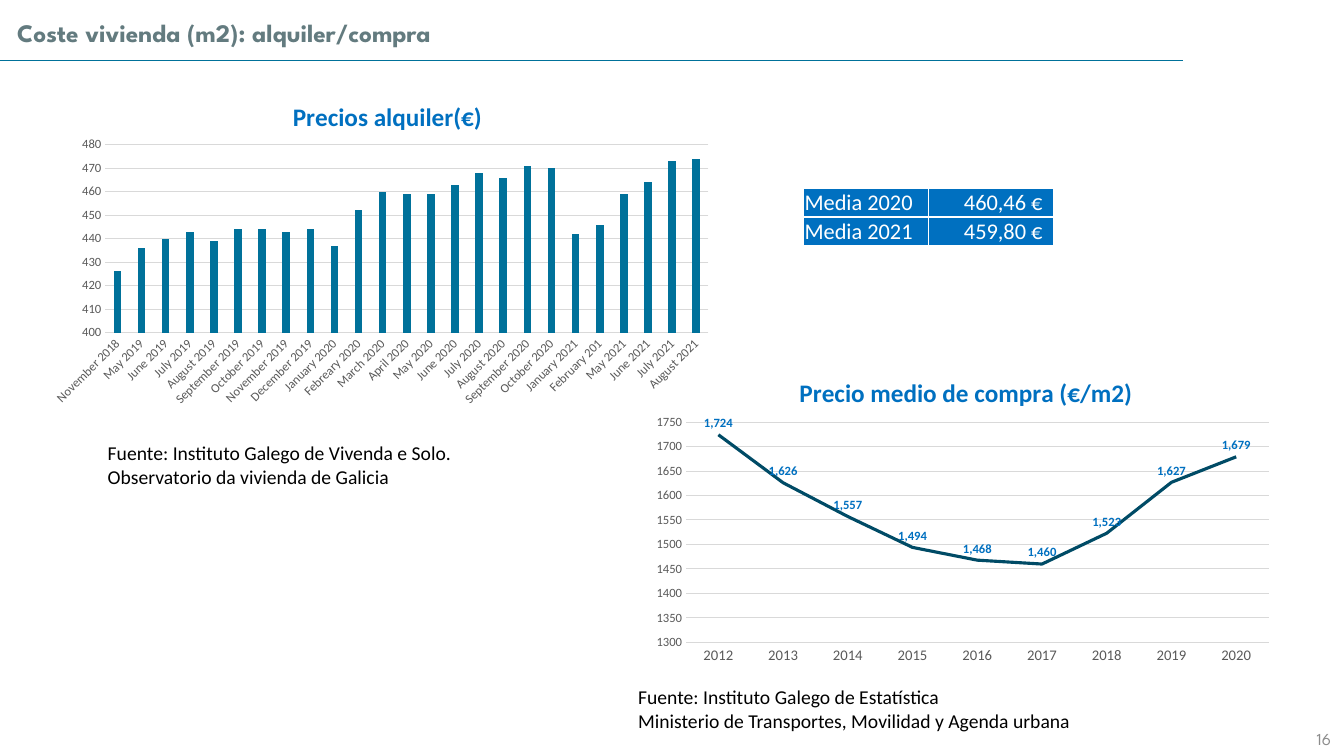
from dataclasses import dataclass

from pptx import Presentation
from pptx.chart.data import CategoryChartData
from pptx.dml.color import RGBColor
from pptx.enum.chart import XL_CHART_TYPE as ChartType, XL_LABEL_POSITION as LabelSpot
from pptx.enum.chart import XL_TICK_MARK as TickMark
from pptx.enum.shapes import MSO_CONNECTOR as Connector
from pptx.enum.text import MSO_ANCHOR as Anchor, PP_ALIGN as Align
from pptx.oxml import parse_xml
from pptx.oxml.ns import nsdecls, qn
from pptx.util import Inches, Pt


@dataclass(frozen=True)
class Theme:
    body: str = "Calibri"
    heading: str = "League Spartan"
    blue: RGBColor = RGBColor.from_string("0070C0")
    teal: RGBColor = RGBColor.from_string("00719A")
    navy: RGBColor = RGBColor.from_string("004B66")
    slate: RGBColor = RGBColor.from_string("637B7F")
    axis: RGBColor = RGBColor.from_string("595959")
    grid: RGBColor = RGBColor.from_string("D9D9D9")
    number: RGBColor = RGBColor.from_string("8C8C8C")
    black: RGBColor = RGBColor.from_string("000000")
    white: RGBColor = RGBColor.from_string("FFFFFF")
    title_size: float = 18
    cell_size: float = 16
    source_size: float = 14
    number_size: float = 12
    chart_size: float = 10
    year_size: float = 10.5
    tick_size: float = 9


theme = Theme()


def write(frame, text, size, color, font=theme.body, bold=False, align=Align.LEFT):
    """Fill a text frame, one paragraph for each line of text."""
    frame.word_wrap = True
    for index, line in enumerate(text.split("\n")):
        para = frame.paragraphs[0] if index == 0 else frame.add_paragraph()
        para.alignment = align
        span = para.add_run()
        span.text = line
        span.font.name, span.font.size = font, Pt(size)
        span.font.bold, span.font.color.rgb = bold, color


def add_price_chart(kind, area, title, prices, scale, category_size, title_spot, plot_area):
    """Add a one-series chart with a blue title and grey axes."""
    data = CategoryChartData()
    data.categories = list(prices)
    data.add_series("Series 1", list(prices.values()))
    chart = page.shapes.add_chart(kind, *map(Inches, area), data).chart
    chart.has_legend = False
    chart.font.name, chart.font.size = theme.body, Pt(theme.chart_size)
    chart.font.color.rgb = theme.black
    write(chart.chart_title.text_frame, title, theme.title_size, theme.blue, bold=True,
          align=Align.CENTER)
    chart.chart_title.include_in_layout = False

    # Axes
    low, high, step = scale
    values, categories = chart.value_axis, chart.category_axis
    values.minimum_scale, values.maximum_scale, values.major_unit = low, high, step
    values.tick_labels.number_format = "General"
    values.tick_labels.number_format_is_linked = False
    values.format.line.fill.background()
    for line in (values.major_gridlines.format.line, categories.format.line):
        line.color.rgb, line.width = theme.grid, Pt(0.75)
    for axis, size in ((values, theme.tick_size), (categories, category_size)):
        axis.major_tick_mark = axis.minor_tick_mark = TickMark.NONE
        font = axis.tick_labels.font
        font.name, font.size, font.color.rgb = theme.body, Pt(size), theme.axis

    # Fixed places for the title and the plot, as fractions of the chart
    title_xml = chart.chart_title._element
    plot_xml = chart._chartSpace.chart.plotArea
    for owner, place, target in ((title_xml, title_spot, ""),
                                 (plot_xml, plot_area, '<c:layoutTarget val="inner"/>')):
        for old in owner.findall(qn("c:layout")):
            owner.remove(old)
        modes = "".join(f'<c:{side}Mode val="edge"/>' for side in "xy")
        sizes = "".join(f'<c:{side} val="{part}"/>' for side, part in zip("xywh", place))
        layout = parse_xml(f'<c:layout {nsdecls("c")}><c:manualLayout>{target}{modes}{sizes}'
                           "</c:manualLayout></c:layout>")
        owner.insert(1 if owner is title_xml else 0, layout)
    return chart


deck = Presentation()
deck.slide_width, deck.slide_height = Inches(13.33), Inches(7.5)
page = deck.slides.add_slide(deck.slide_layouts[6])

# Rule under the heading
rule = page.shapes.add_connector(Connector.STRAIGHT, 0, Inches(0.6), Inches(11.73), Inches(0.6))
rule.line.color.rgb, rule.line.width = theme.teal, Pt(1)
rule._element.spPr.append(parse_xml(f'<a:effectLst {nsdecls("a")}/>'))

# Heading and yearly averages, both as tables
heading_style = dict(size=theme.title_size, color=theme.slate, font=theme.heading, bold=True)
average_style = dict(size=theme.cell_size, color=theme.white)
tables = [
    ((0.12, 0.19, 8.14, 0.31), [["Coste vivienda (m2): alquiler/compra"]],
     heading_style, theme.white, Anchor.MIDDLE, (0.05, 0.05), 0),
    ((7.97, 1.87, 2.48, 0.55), [["Media 2020", "460,46 €"], ["Media 2021", "459,80 €"]],
     average_style, theme.blue, Anchor.BOTTOM, (0.01, 0.11), 0.01),
]
for area, rows, style, fill, anchor, (left, right), top in tables:
    table = page.shapes.add_table(len(rows), len(rows[0]), *map(Inches, area)).table
    table.first_row = table.horz_banding = False
    for row_index, row in enumerate(rows):
        for column_index, text in enumerate(row):
            cell = table.cell(row_index, column_index)
            cell.margin_left, cell.margin_right = Inches(left), Inches(right)
            cell.margin_top, cell.margin_bottom = Inches(top), 0
            cell.vertical_anchor = anchor
            write(cell.text_frame, text, **style,
                  align=Align.RIGHT if column_index else Align.LEFT)
            properties = cell._tc.get_or_add_tcPr()
            for side in ("lnL", "lnR", "lnT", "lnB"):
                properties.append(parse_xml(
                    f'<a:{side} {nsdecls("a")} w="{Pt(1)}"><a:solidFill>'
                    f'<a:srgbClr val="{theme.white}"/></a:solidFill></a:{side}>'))
            cell.fill.solid()
            cell.fill.fore_color.rgb = fill
    if style is heading_style:
        heading = table.cell(0, 0).text_frame.paragraphs[0]
        heading.line_spacing, heading.space_after = 1.15, Pt(10)

# Rent chart
rents = {
    "November 2018": 426, "May 2019": 436, "June 2019": 440, "July 2019": 443,
    "August 2019": 439, "September 2019": 444, "October 2019": 444, "November 2019": 443,
    "December 2019": 444, "January 2020": 437, "Febreary 2020": 452, "March 2020": 460,
    "April 2020": 459, "May 2020": 459, "June 2020": 463, "July 2020": 468,
    "August 2020": 466, "September 2020": 471, "October 2020": 470, "January 2021": 442,
    "February 201": 446, "May 2021": 459, "June 2021": 464, "July 2021": 473,
    "August 2021": 474,
}
rent_chart = add_price_chart(
    ChartType.COLUMN_CLUSTERED, (0.44, 0.77, 6.72, 3.33), "Precios alquiler(€)", rents,
    (400, 480, 10), theme.tick_size, (0.36, 0.05), (0.09, 0.2, 0.89, 0.56))
rent_plot = rent_chart.plots[0]
rent_plot.gap_width, rent_plot.overlap, rent_plot.vary_by_categories = 219, -27, False
bars = rent_plot.series[0].format.fill
bars.solid()
bars.fore_color.rgb = theme.teal
rent_chart.category_axis._element.txPr.bodyPr.set("rot", str(-45 * 60000))

# Purchase chart
purchases = dict(zip(map(str, range(2012, 2021)),
                     (1724, 1626, 1557, 1494, 1468, 1460, 1523, 1627, 1679)))
purchase_chart = add_price_chart(
    ChartType.LINE, (6.36, 3.49, 6.35, 3.17), "Precio medio de compra (€/m2)", purchases,
    (1300, 1750, 50), theme.year_size, (0.24, 0.06), (0.07, 0.22, 0.91, 0.69))
purchase_plot = purchase_chart.plots[0]
purchase_plot.vary_by_categories = False
curve = purchase_plot.series[0]
curve.smooth = False
curve.format.line.color.rgb, curve.format.line.width = theme.navy, Pt(2.25)
labels = curve.data_labels
labels.show_value, labels.position = True, LabelSpot.ABOVE
labels.number_format, labels.number_format_is_linked = "#,##0", False
labels.font.name, labels.font.size = theme.body, Pt(theme.tick_size)
labels.font.bold, labels.font.color.rgb = True, theme.blue

# Sources and page number
source_style = dict(size=theme.source_size, color=theme.black)
number_style = dict(size=theme.number_size, color=theme.number, font=theme.heading,
                    align=Align.RIGHT)
notes = [
    ((0.97, 4.33, 6.82, 0.57), Anchor.TOP, source_style,
     "Fuente: Instituto Galego de Vivenda e Solo.\nObservatorio da vivienda de Galicia"),
    ((6.23, 6.75, 6.82, 0.57), Anchor.TOP, source_style,
     "Fuente: Instituto Galego de Estatística\n"
     "Ministerio de Transportes, Movilidad y Agenda urbana"),
    ((10.3, 7.08, 3, 0.4), Anchor.BOTTOM, number_style, "16"),
]
for area, anchor, style, text in notes:
    box = page.shapes.add_textbox(*map(Inches, area))
    box.text_frame.vertical_anchor = anchor
    write(box.text_frame, text, **style)

deck.save("out.pptx")
